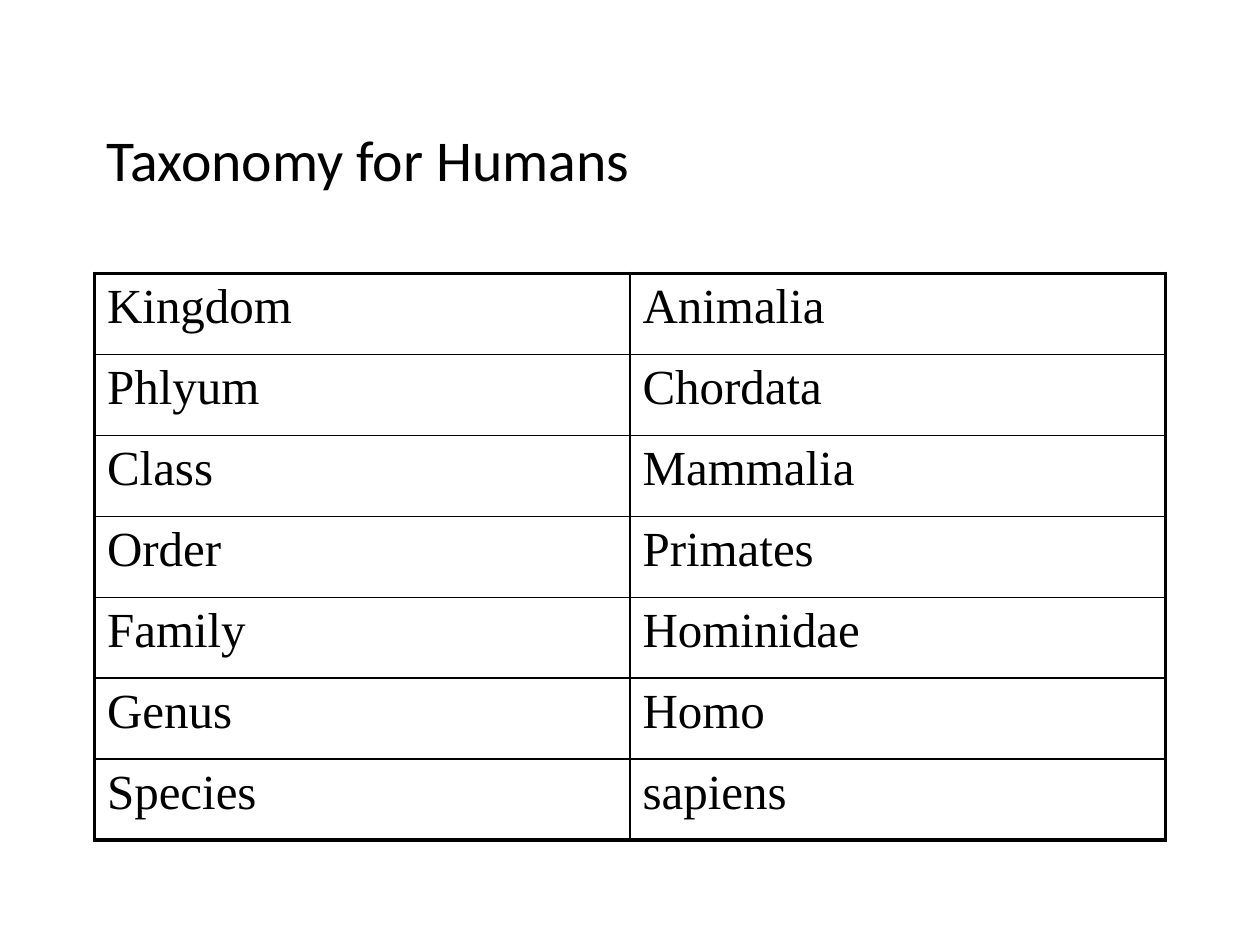
from dataclasses import dataclass

from lxml import etree
from pptx import Presentation
from pptx import util as u
from pptx.dml.color import RGBColor
from pptx.enum import text
from pptx.oxml.ns import qn


@dataclass(frozen=True)
class Theme:
    ink: str = "000000"
    paper: str = "FFFFFF"
    title_font: str = "Calibri"
    title_size: int = 33
    table_font: str = "Times New Roman"
    table_size: int = 28
    outer_line: float = 2.25
    inner_line: float = 1


theme = Theme()
ranks = [
    ("Kingdom", "Animalia"),
    ("Phlyum", "Chordata"),
    ("Class", "Mammalia"),
    ("Order", "Primates"),
    ("Family", "Hominidae"),
    ("Genus", "Homo"),
    ("Species", "sapiens"),
]


def write(paragraph, words, font_name, size):
    paragraph.text = words
    font = paragraph.runs[0].font
    for name, value in {"name": font_name, "size": u.Pt(size), "bold": False}.items():
        setattr(font, name, value)
    font.color.rgb = RGBColor.from_string(theme.ink)


def add_border(cell, side, width):
    line = etree.SubElement(cell._tc.get_or_add_tcPr(), qn(f"a:ln{side}"), w=str(u.Pt(width)))
    fill = etree.SubElement(line, qn("a:solidFill"))
    etree.SubElement(fill, qn("a:srgbClr"), val=theme.ink)


# Slide
presentation = Presentation()
presentation.slide_width, presentation.slide_height = u.Inches(10), u.Inches(7.5)
slide = presentation.slides.add_slide(presentation.slide_layouts[6])
slide.background.fill.solid()
slide.background.fill.fore_color.rgb = RGBColor.from_string(theme.paper)

# Shared column, centred on the slide
left = u.Inches(0.75)
width = presentation.slide_width - 2 * left

# Title
title = slide.shapes.add_textbox(left, u.Inches(0.67), width, u.Inches(1.25))
frame = title.text_frame
for name, value in {"word_wrap": True, "vertical_anchor": text.MSO_ANCHOR.MIDDLE}.items():
    setattr(frame, name, value)
frame.paragraphs[0].line_spacing = 0.9
write(frame.paragraphs[0], "Taxonomy for Humans", theme.title_font, theme.title_size)

# Taxonomy table: equal rows and columns
row_count, column_count = len(ranks), len(ranks[0])
table = slide.shapes.add_table(
    row_count, column_count, left, u.Inches(2.17), width, u.Inches(4.5)
).table
for name in ("first_row", "horz_banding"):
    setattr(table, name, False)

# Cells: heavy lines on the outer edge, thin lines within
for row, names in enumerate(ranks):
    for column, words in enumerate(names):
        cell = table.cell(row, column)
        write(cell.text_frame.paragraphs[0], words, theme.table_font, theme.table_size)
        outer_sides = {
            "L": column == 0,
            "R": column == column_count - 1,
            "T": row == 0,
            "B": row == row_count - 1,
        }
        for side, is_outer in outer_sides.items():
            add_border(cell, side, theme.outer_line if is_outer else theme.inner_line)
        cell.fill.background()

presentation.save("out.pptx")
